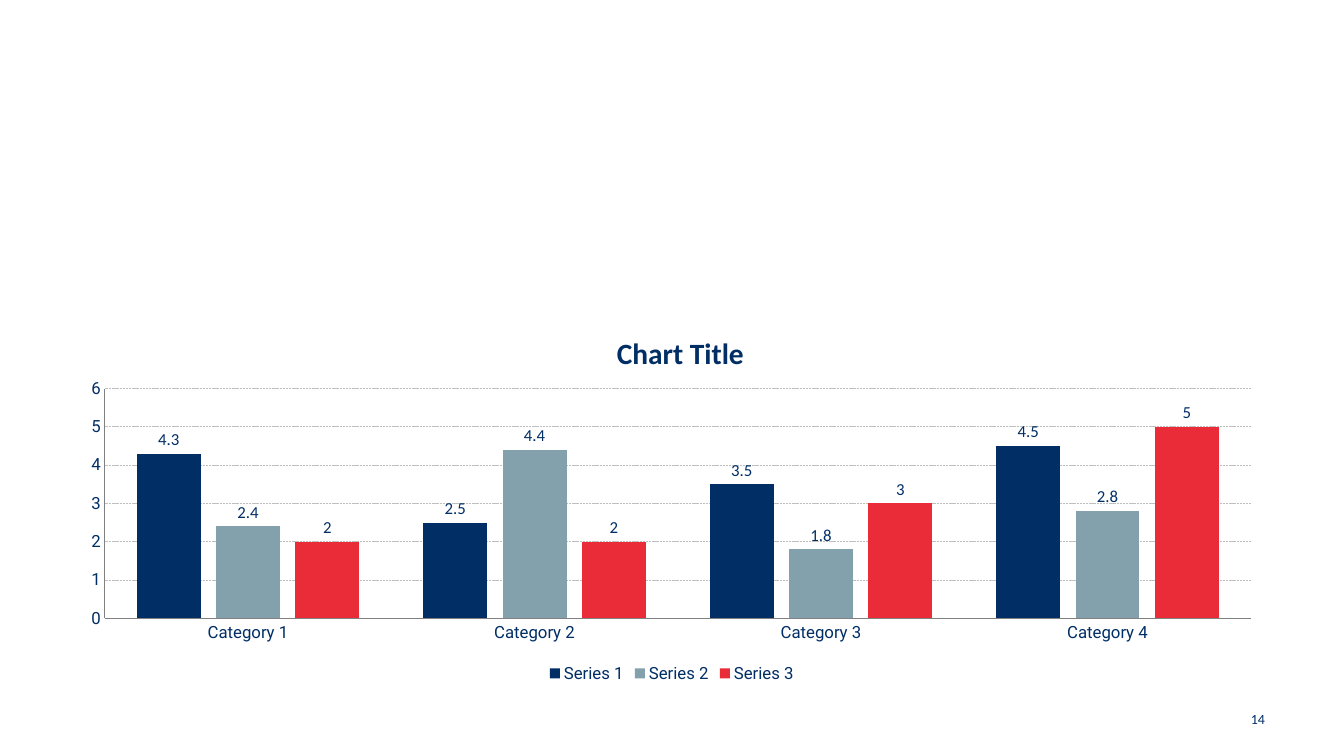
from lxml import etree
from pptx import Presentation
from pptx.chart.data import CategoryChartData
from pptx.dml.color import RGBColor
from pptx.enum.chart import XL_CHART_TYPE, XL_LABEL_POSITION, XL_LEGEND_POSITION, XL_TICK_MARK
from pptx.enum.dml import MSO_LINE
from pptx.enum.text import MSO_ANCHOR, PP_ALIGN
from pptx.oxml.ns import qn
from pptx.util import Cm, Pt

NAVY = RGBColor(0x00, 0x2E, 0x65)
STEEL = RGBColor(0x82, 0xA1, 0xAD)
RED = RGBColor(0xEA, 0x2C, 0x38)
GREY = RGBColor(0x80, 0x80, 0x80)
SILVER = RGBColor(0xBF, 0xBF, 0xBF)

COLUMN = XL_CHART_TYPE.COLUMN_CLUSTERED
OUTER = XL_LABEL_POSITION.OUTSIDE_END
BOTTOM = XL_LEGEND_POSITION.BOTTOM
NO_TICK = XL_TICK_MARK.NONE
DASH = MSO_LINE.SQUARE_DOT
MIDDLE = MSO_ANCHOR.MIDDLE
RIGHT = PP_ALIGN.RIGHT

GROUPS = ["Category 1", "Category 2", "Category 3", "Category 4"]
SERIES = [
    ("Series 1", (4.3, 2.5, 3.5, 4.5), NAVY),
    ("Series 2", (2.4, 4.4, 1.8, 2.8), STEEL),
    ("Series 3", (2, 2, 3, 5), RED),
]
AXIS = {"name": "Roboto", "size": Pt(12)}
LABEL = {"name": "Calibri", "size": Pt(12)}
HEAD = {"name": "Calibri", "size": Pt(21), "bold": True}
PAGE = {"name": "Calibri", "size": Pt(10)}


def set_all(item, values):
    """Set each attribute of item from a dict."""
    for name, value in values.items():
        setattr(item, name, value)


def set_font(font, values):
    """Format a font in navy."""
    set_all(font, values)
    font.color.rgb = NAVY


def set_line(line, color):
    """Give a line its colour and a half-point width."""
    line.color.rgb = color
    line.width = Pt(0.5)


def set_place(layout, values):
    """Place a chart part by fractions of the chart."""
    for old in list(layout):
        layout.remove(old)
    manual = etree.SubElement(layout, qn("c:manualLayout"))
    for name, value in values.items():
        etree.SubElement(manual, qn("c:" + name)).set("val", str(value))


def style_axis(axis):
    """Format one axis with its labels and line."""
    set_all(axis, {"major_tick_mark": NO_TICK, "minor_tick_mark": NO_TICK})
    set_font(axis.tick_labels.font, AXIS)
    set_line(axis.format.line, GREY)


def style_bars(bars, color):
    """Fill one series and show its values."""
    bars.format.fill.solid()
    bars.format.fill.fore_color.rgb = color
    labels = bars.data_labels
    set_all(labels, {"show_value": True, "position": OUTER})
    set_font(labels.font, LABEL)


def add_title(chart, text):
    """Add the chart title."""
    chart.has_title = True
    title = chart.chart_title
    title.text_frame.text = text
    set_font(title.text_frame.paragraphs[0].runs[0].font, HEAD)
    title.include_in_layout = False
    layout = title._element.get_or_add_layout() if hasattr(
        title._element, "get_or_add_layout") else title._element.find(qn("c:layout"))
    set_place(layout, {"xMode": "edge", "yMode": "edge", "x": 0.45, "y": 0.06})


def add_bars(slide):
    """Add the clustered column chart."""
    data = CategoryChartData()
    data.categories = GROUPS
    for name, values, _ in SERIES:
        data.add_series(name, values)
    frame = slide.shapes.add_chart(COLUMN, Cm(1.73), Cm(7.67), Cm(30.4), Cm(9.65), data)
    chart = frame.chart
    set_font(chart.font, {"name": "Roboto", "size": Pt(10)})
    add_title(chart, "Chart Title")
    plot = chart.plots[0]
    set_all(plot, {"gap_width": 100, "overlap": -24, "vary_by_categories": False})
    for bars, (_, _, color) in zip(plot.series, SERIES):
        style_bars(bars, color)
    for axis in (chart.category_axis, chart.value_axis):
        style_axis(axis)
    set_all(chart.value_axis, {"minimum_scale": 0, "maximum_scale": 6, "major_unit": 1})
    grid = chart.value_axis.major_gridlines.format.line
    set_line(grid, SILVER)
    grid.dash_style = DASH
    chart.has_legend = True
    set_all(chart.legend, {"position": BOTTOM, "include_in_layout": False})
    set_font(chart.legend.font, AXIS)
    area = chart._chartSpace.chart.plotArea
    layout = area.find(qn("c:layout"))
    if layout is None:
        layout = etree.Element(qn("c:layout"))
        area.insert(0, layout)
    set_place(layout, {"layoutTarget": "inner", "xMode": "edge", "yMode": "edge",
                       "x": 0.03, "y": 0.22, "w": 0.95, "h": 0.6})


def add_page(slide, text):
    """Add the page number."""
    box = slide.shapes.add_textbox(Cm(24.79), Cm(17.6), Cm(7.34), Cm(1.02))
    frame = box.text_frame
    set_all(frame, {"word_wrap": True, "vertical_anchor": MIDDLE, "text": text})
    line = frame.paragraphs[0]
    line.alignment = RIGHT
    set_font(line.runs[0].font, PAGE)


def main():
    """Build and save the slide."""
    deck = Presentation()
    set_all(deck, {"slide_width": Cm(33.87), "slide_height": Cm(19.05)})
    slide = deck.slides.add_slide(deck.slide_layouts[6])
    add_page(slide, "14")
    add_bars(slide)
    deck.save("out.pptx")


if __name__ == "__main__":
    main()
